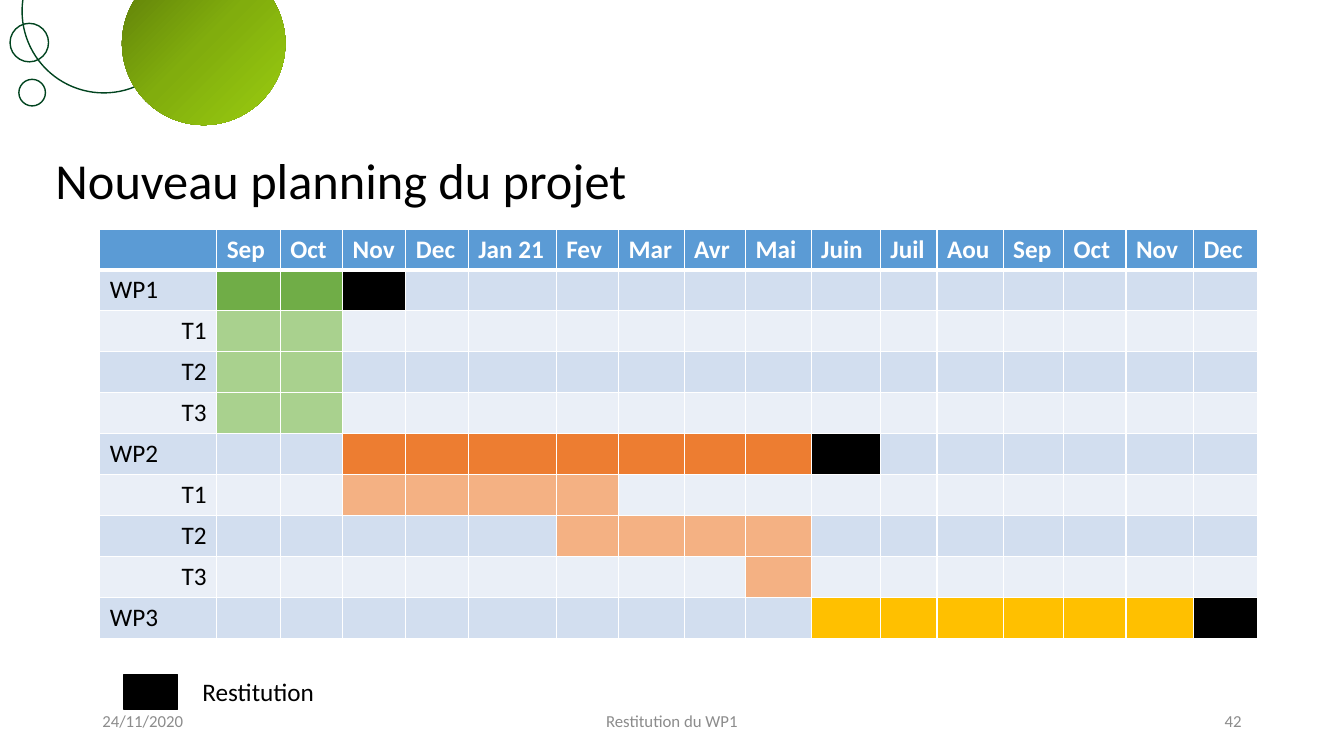
import copy

import pptx
import pptx.util
import pptx.dml.color
import pptx.enum.shapes
import pptx.enum.text
import pptx.oxml.ns
import lxml.etree

Pt = pptx.util.Pt
ALIGN = pptx.enum.text.PP_ALIGN
ANCHOR = pptx.enum.text.MSO_ANCHOR
SHAPE = pptx.enum.shapes.MSO_SHAPE
qn = pptx.oxml.ns.qn

FONT = "Calibri"
COLORS = {
    "white": "FFFFFF", "black": "000000", "footer": "8C8C8C", "ring": "01441F",
    "header": "5B9BD5", "odd": "D2DEEF", "even": "EAEFF7",
    "wp1": "70AD47", "wp1_task": "A9D18E",
    "wp2": "ED7D31", "wp2_task": "F4B183", "wp3": "FFC000",
}
BALL_STOPS = [(0, "5B7A09"), (0.5, "81AD0D"), (1, "9ACD10")]

MONTHS = ["Sep", "Oct", "Nov", "Dec", "Jan 21", "Fev", "Mar", "Avr", "Mai",
          "Juin", "Juil", "Aou", "Sep", "Oct", "Nov", "Dec"]
COLUMN_WIDTHS = [83.5, 45.4, 44.6, 45.2, 44.6, 62.8, 44.6, 46.8, 43.9,
                 46.8, 49.5, 40.4, 47.3, 43.2, 44.6, 48.2, 46.1]
ROW_HEIGHT = 29.23

# Work package or task, colour, first and last month, delivery month
PLAN = [
    ("WP1", "wp1", 1, 2, 3),
    ("T1", "wp1_task", 1, 2, None),
    ("T2", "wp1_task", 1, 2, None),
    ("T3", "wp1_task", 1, 2, None),
    ("WP2", "wp2", 3, 9, 10),
    ("T1", "wp2_task", 3, 6, None),
    ("T2", "wp2_task", 6, 9, None),
    ("T3", "wp2_task", 9, 9, None),
    ("WP3", "wp3", 10, 15, 16),
]


def rgb(hex_value):
    return pptx.dml.color.RGBColor.from_string(hex_value)


def format_paragraph(paragraph, size, color="black", align=ALIGN.LEFT, bold=False):
    paragraph.alignment = align
    paragraph.font.name = FONT
    paragraph.font.size = Pt(size)
    paragraph.font.bold = bold
    paragraph.font.color.rgb = rgb(COLORS[color])


def add_label(slide, text, box, size, color="black", align=ALIGN.LEFT,
              anchor=ANCHOR.TOP, wrap=True):
    label = slide.shapes.add_textbox(*map(Pt, box)).text_frame
    label.word_wrap = wrap
    label.vertical_anchor = anchor
    label.text = text
    format_paragraph(label.paragraphs[0], size, color, align)


def add_plain_shape(slide, kind, box, fill=None, line=None):
    shape = slide.shapes.add_shape(kind, *map(Pt, box))
    shape.shadow.inherit = False
    if fill:
        shape.fill.solid()
        shape.fill.fore_color.rgb = rgb(COLORS[fill])
    else:
        shape.fill.background()
    if line:
        shape.line.color.rgb = rgb(COLORS[line])
        shape.line.width = Pt(1)
    else:
        shape.line.fill.background()
    return shape


def add_circle(slide, left, top, diameter, line=None):
    return add_plain_shape(slide, SHAPE.OVAL, (left, top, diameter, diameter), line=line)


def add_gradient_ball(slide, left, top, diameter):
    ball = add_circle(slide, left, top, diameter)
    ball.fill.gradient()
    ball.fill.gradient_angle = 315
    stop_list = next(ball._element.spPr.iter(qn("a:gsLst")))
    stop_list.insert(1, copy.deepcopy(stop_list[0]))
    for stop, (position, color) in zip(ball.fill.gradient_stops, BALL_STOPS):
        stop.position = position
        stop.color.rgb = rgb(color)


def format_cell(cell, fill, top=1, bottom=1):
    properties = cell._tc.get_or_add_tcPr()
    for side, width in (("L", 1), ("R", 1), ("T", top), ("B", bottom)):
        border = lxml.etree.SubElement(properties, qn("a:ln" + side), w=str(Pt(width)))
        solid = lxml.etree.SubElement(border, qn("a:solidFill"))
        lxml.etree.SubElement(solid, qn("a:srgbClr"), val=COLORS["white"])
    cell.fill.solid()
    cell.fill.fore_color.rgb = rgb(COLORS[fill])


def write_cell(cell, text, **style):
    cell.text = text
    format_paragraph(cell.text_frame.paragraphs[0], 18, **style)


def add_planning(slide, left, top):
    rows, columns = len(PLAN) + 1, len(COLUMN_WIDTHS)
    planning = slide.shapes.add_table(
        rows, columns, Pt(left), Pt(top),
        Pt(sum(COLUMN_WIDTHS)), Pt(ROW_HEIGHT * rows)).table
    for column, width in zip(planning.columns, COLUMN_WIDTHS):
        column.width = Pt(width)
    for row in planning.rows:
        row.height = Pt(ROW_HEIGHT)

    # Month header
    for month, name in enumerate([""] + MONTHS):
        cell = planning.cell(0, month)
        format_cell(cell, "header", bottom=3)
        if name:
            write_cell(cell, name, color="white", bold=True)

    # Work packages and their tasks
    for row, (name, color, first, last, delivery) in enumerate(PLAN, start=1):
        band = "odd" if row % 2 else "even"
        for month in range(columns):
            if month == delivery:
                fill = "black"
            else:
                fill = color if first <= month <= last else band
            format_cell(planning.cell(row, month), fill, top=3 if row == 1 else 1)
        align = ALIGN.RIGHT if name.startswith("T") else ALIGN.LEFT
        write_cell(planning.cell(row, 0), name, align=align)


def set_title(slide, text, box):
    title = slide.shapes.title
    title.left, title.top, title.width, title.height = map(Pt, box)
    title.text_frame.text = text
    title.text_frame.word_wrap = True
    title.text_frame.vertical_anchor = ANCHOR.MIDDLE
    paragraph = title.text_frame.paragraphs[0]
    format_paragraph(paragraph, 36)
    paragraph.line_spacing = 0.9


def main():
    deck = pptx.Presentation()
    deck.slide_width, deck.slide_height = Pt(960), Pt(540)
    slide = deck.slides.add_slide(deck.slide_layouts[5])

    # Corner decoration
    add_circle(slide, 15.8, -50.4, 116.8, "ring")
    add_gradient_ball(slide, 87.1, -27.4, 116.8)
    add_circle(slide, 7.2, 16.7, 27.5, "ring")
    add_circle(slide, 13.5, 56.7, 19, "ring")

    # Title and planning
    set_title(slide, "Nouveau planning du projet", (32.4, 99.4, 828, 63.4))
    add_planning(slide, 71.3, 163.6)

    # Legend
    add_plain_shape(slide, SHAPE.RECTANGLE, (88.6, 481.7, 38.2, 25.2), "black", "black")
    add_label(slide, "Restitution", (137.5, 479.5, 95, 29), 18, wrap=False)

    # Footer
    for text, left, width, align in (
            ("24/11/2020", 66, 216, ALIGN.LEFT),
            ("Restitution du WP1", 318, 324, ALIGN.CENTER),
            ("42", 678, 216, ALIGN.RIGHT)):
        add_label(slide, text, (left, 500.5, width, 28.75), 12, "footer",
                  align, ANCHOR.MIDDLE)

    deck.save("out.pptx")


if __name__ == "__main__":
    main()
